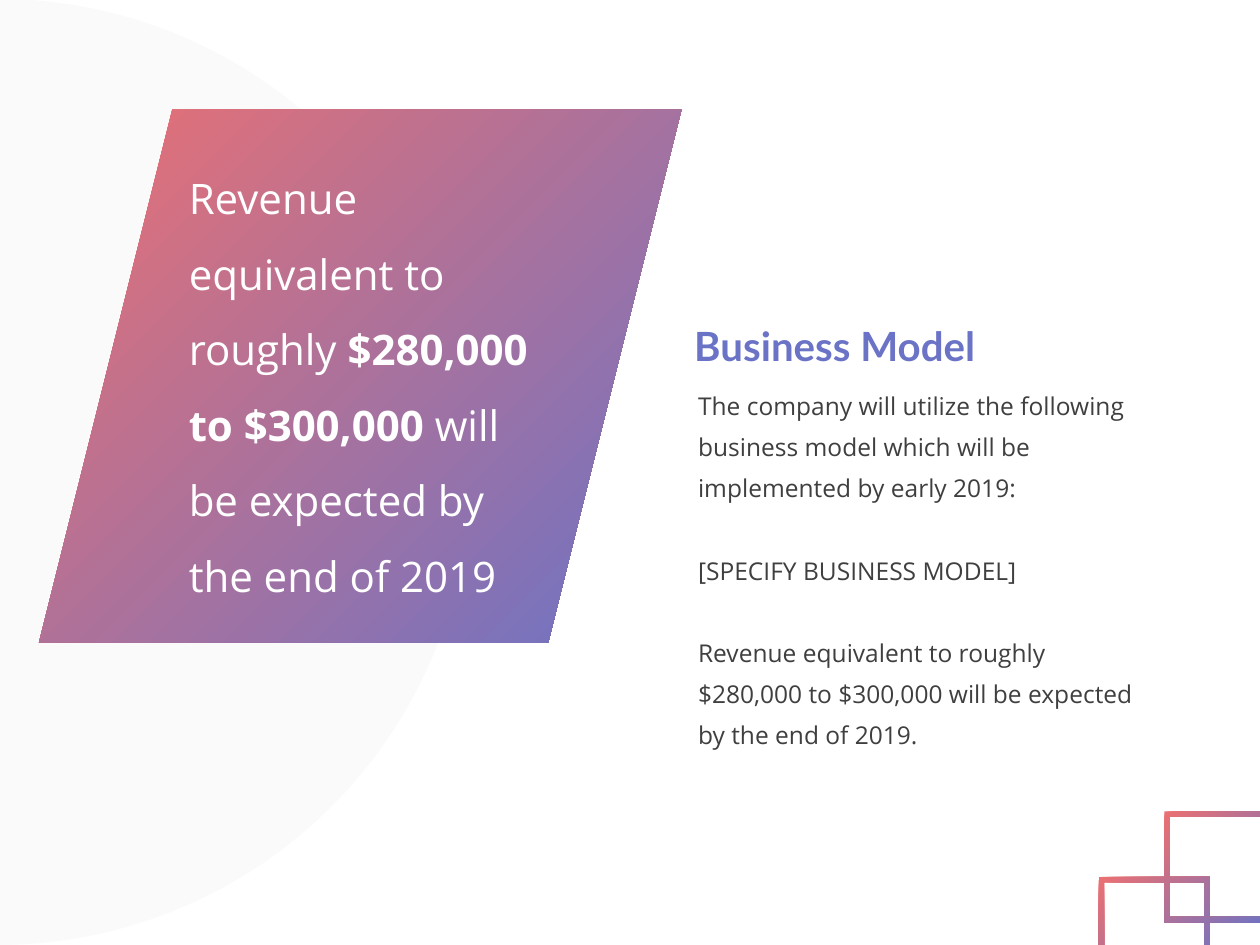
import pptx
import pptx.dml.color
import pptx.enum.shapes
import pptx.enum.text
import pptx.oxml
import pptx.oxml.ns
import pptx.util

Inches = pptx.util.Inches
Pt = pptx.util.Pt
Shape = pptx.enum.shapes.MSO_SHAPE

CORAL, INDIGO, GREY, TEXT, WHITE = "EB7072", "6B73C6", "FAFAFA", "3F3F3F", "FFFFFF"


def rgb(value):
    return pptx.dml.color.RGBColor.from_string(value)


def add_plain_shape(shapes, kind, box, adjustments):
    """Add a preset shape without line or shadow."""
    shape = shapes.add_shape(kind, *map(Inches, box))
    for index, value in enumerate(adjustments):
        shape.adjustments[index] = value
    shape.line.fill.background()
    shape.shadow.inherit = False
    return shape


def fill_diagonal(shape):
    """Blend coral into indigo from top left to bottom right."""
    shape.fill.gradient()
    shape.fill.gradient_angle = 315
    for stop, colour in zip(shape.fill.gradient_stops, (CORAL, INDIGO)):
        stop.color.rgb = rgb(colour)


def format_frame(shape, box):
    shape.left, shape.top, shape.width, shape.height = map(Inches, box)
    frame = shape.text_frame
    frame.word_wrap = True
    frame.auto_size = pptx.enum.text.MSO_AUTO_SIZE.NONE
    frame.vertical_anchor = pptx.enum.text.MSO_ANCHOR.TOP
    return frame


def format_para(para, font, size, colour, spacing=1.0, before=0):
    para.alignment = pptx.enum.text.PP_ALIGN.LEFT
    para.line_spacing = spacing
    para.space_before = Pt(before)
    para.font.name = font
    para.font.size = Pt(size)
    para.font.color.rgb = rgb(colour)


def remove_bullet(para):
    properties = para._p.get_or_add_pPr()
    properties.set("marL", "0")
    properties.set("indent", "0")
    properties.append(pptx.oxml.parse_xml(
        f"<a:buNone {pptx.oxml.ns.nsdecls('a')}/>"))


def add_half_disc(page, box):
    disc = add_plain_shape(page.shapes, Shape.CHORD, box, (162, 54))
    disc.fill.solid()
    disc.fill.fore_color.rgb = rgb(GREY)


def add_corner_frames(page, box):
    """Two overlapping square frames stepping up to the right."""
    left, top, side, step = box
    group = page.shapes.add_group_shape()
    for x, y in ((left, top + step), (left + step, top)):
        fill_diagonal(add_plain_shape(
            group.shapes, Shape.FRAME, (x, y, side, side), (0.05,)))


def add_revenue_panel(page, box):
    left, top, width, height = box
    fill_diagonal(add_plain_shape(page.shapes, Shape.PARALLELOGRAM, box, (0.25,)))
    text_box = page.shapes.add_textbox(0, 0, 0, 0)
    frame = format_frame(
        text_box, (left + 1.09, top + 0.25, width - 2.16, height - 0.49))
    para = frame.paragraphs[0]
    format_para(para, "Open Sans", 24, WHITE, 1.5)
    for text, bold in (
        ("Revenue equivalent to roughly ", False),
        ("$280,000 to $300,000 ", True),
        ("will be expected by the end of 2019", False),
    ):
        span = para.add_run()
        span.text = text
        span.font.bold = bold


def place_title(page, box):
    frame = format_frame(page.shapes.title, box)
    frame.text = "Business Model"
    para = frame.paragraphs[0]
    format_para(para, "Lato", 23, INDIGO)
    para.font.bold = True


def place_body(page, box):
    frame = format_frame(page.placeholders[1], box)
    frame.text = "\n".join((
        "The company will utilize the following business model which will be "
        "implemented by early 2019:",
        "[SPECIFY BUSINESS MODEL]",
        "Revenue equivalent to roughly $280,000 to $300,000 will be expected "
        "by the end of 2019.",
    ))
    for index, para in enumerate(frame.paragraphs):
        format_para(para, "Open Sans", 14, TEXT, 1.4, 23.5 if index else 0)
        remove_bullet(para)


def main():
    deck = pptx.Presentation()
    deck.slide_width, deck.slide_height = Inches(10), Inches(7.5)
    page = deck.slides.add_slide(deck.slide_layouts[1])
    add_half_disc(page, (-3.78, -0.01, 7.51, 7.51))
    place_body(page, (5.44, 2.96, 3.75, 2.85))
    place_title(page, (5.41, 2.5, 2.8, 0.49))
    add_corner_frames(page, (8.72, 6.44, 0.88, 0.52))
    add_revenue_panel(page, (0.31, 0.87, 5.1, 4.23))
    deck.save("out.pptx")


if __name__ == "__main__":
    main()
